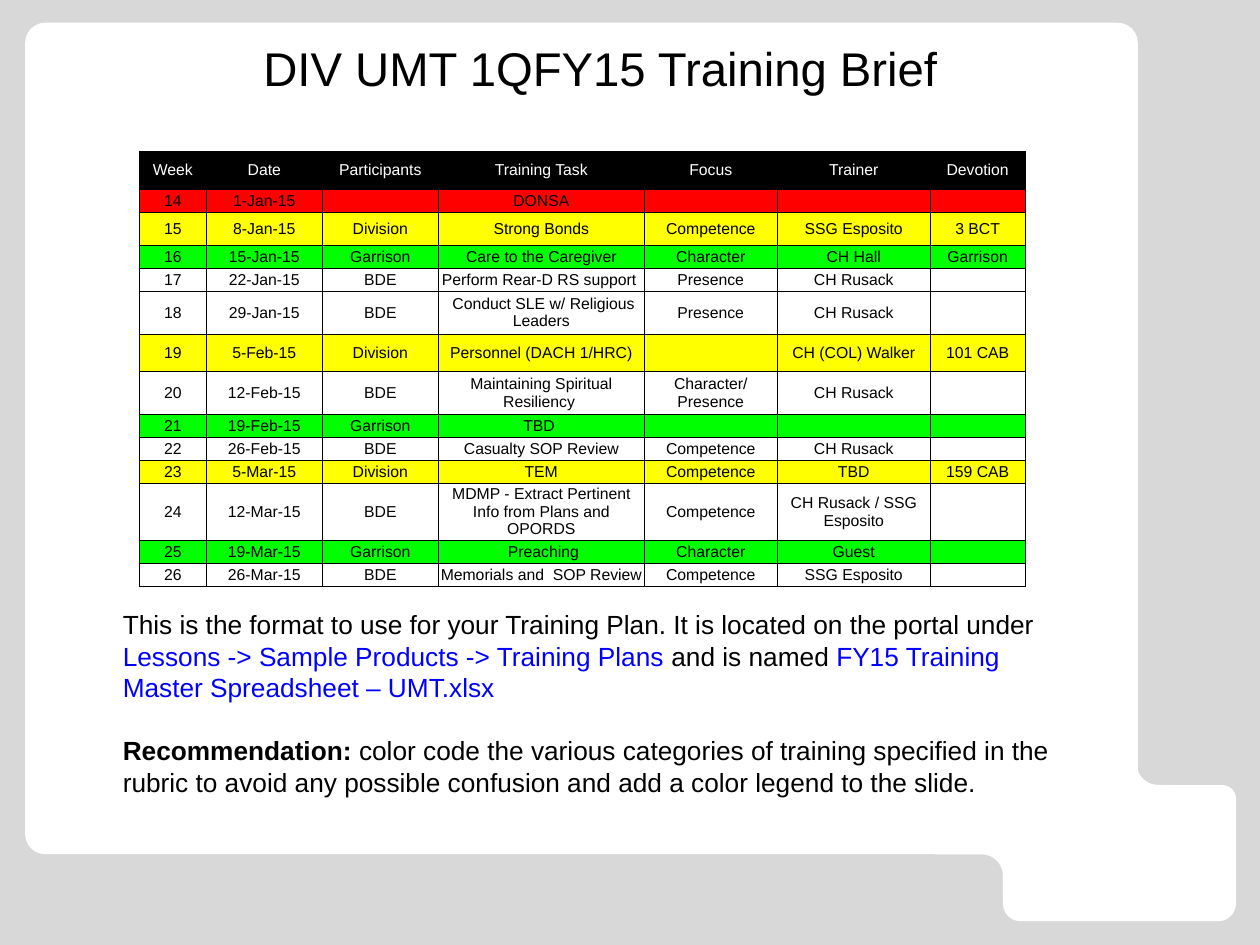
from math import cos, radians, sin

from lxml.etree import SubElement
from pptx import Presentation
from pptx.dml.color import RGBColor
from pptx.enum.shapes import MSO_SHAPE
from pptx.enum.text import MSO_ANCHOR, PP_ALIGN
from pptx.oxml.ns import qn
from pptx.util import Pt

FONT = "Arial"
BLACK, WHITE, BLUE = "000000", "FFFFFF", "0000FF"
RED, YELLOW, GREEN = "FF0000", "FFFF00", "00FF00"

COLUMN_WIDTHS = [38.3, 66.3, 66.3, 117.7, 76, 87.4, 54.3]
HEADINGS = ["Week", "Date", "Participants", "Training Task", "Focus", "Trainer", "Devotion"]
FIRST_WEEK = 14
# Row height, date, participants, task, focus, trainer, devotion
WEEKS = [
    (13.1, "1-Jan-15", "", "DONSA", "", "", ""),
    (18.9, "8-Jan-15", "Division", "Strong Bonds", "Competence", "SSG Esposito", "3 BCT"),
    (13.1, "15-Jan-15", "Garrison", "Care to the Caregiver", "Character", "CH Hall", "Garrison"),
    (13.1, "22-Jan-15", "BDE", "Perform Rear-D RS support ", "Presence", "CH Rusack", ""),
    (24.6, "29-Jan-15", "BDE", " Conduct SLE w/ Religious Leaders", "Presence", "CH Rusack", ""),
    (21.4, "5-Feb-15", "Division", "Personnel (DACH 1/HRC)", "", "CH (COL) Walker", "101 CAB"),
    (24.6, "12-Feb-15", "BDE", "Maintaining Spiritual Resiliency ", "Character/ Presence",
     "CH Rusack", ""),
    (13.1, "19-Feb-15", "Garrison", "TBD ", "", "", ""),
    (13.1, "26-Feb-15", "BDE", "Casualty SOP Review", "Competence", "CH Rusack", ""),
    (13.1, "5-Mar-15", "Division", "TEM", "Competence", "TBD", "159 CAB"),
    (32.6, "12-Mar-15", "BDE", "MDMP - Extract Pertinent Info from Plans and OPORDS",
     "Competence", "CH Rusack / SSG Esposito", ""),
    (13.1, "19-Mar-15", "Garrison", " Preaching", "Character", "Guest", ""),
    (13.1, "26-Mar-15", "BDE", "Memorials and  SOP Review", "Competence", "SSG Esposito", ""),
]
PARTICIPANT_FILLS = {"": RED, "Division": YELLOW, "Garrison": GREEN, "BDE": WHITE}

ADVICE = [
    [("This is the format to use for your Training Plan. It is located on the portal under ",
      BLACK, False),
     ("Lessons -> Sample Products -> Training Plans ", BLUE, False),
     ("and is named ", BLACK, False),
     ("FY15 Training Master Spreadsheet – UMT.xlsx", BLUE, False)],
    [("Recommendation: ", BLACK, True),
     ("color code the various categories of training specified in the rubric to avoid any "
      "possible confusion and add a color legend to the slide.", BLACK, False)],
]


def rgb(value):
    return RGBColor.from_string(value)


def paint_white(shape):
    shape.shadow.inherit = False
    shape.fill.solid()
    shape.fill.fore_color.rgb = rgb(WHITE)
    shape.line.fill.background()


def add_panel(slide, kind, left, top, width, height, roundings=()):
    panel = slide.shapes.add_shape(kind, Pt(left), Pt(top), Pt(width), Pt(height))
    for index, rounding in enumerate(roundings):
        panel.adjustments[index] = rounding
    paint_white(panel)


def add_fillet(slide, center, start, end, corners):
    """Fill an inner corner between panels: an arc in degrees, closed through corners."""
    radius, steps = 12.2, 12
    angles = [radians(start + (end - start) * step / steps) for step in range(steps + 1)]
    arc = [(center[0] + radius * cos(a), center[1] + radius * sin(a)) for a in angles]
    outline = [(Pt(x), Pt(y)) for x, y in arc + corners]
    builder = slide.shapes.build_freeform(*outline[0])
    builder.add_line_segments(outline[1:], close=True)
    paint_white(builder.convert_to_shape())


def add_backdrop(slide):
    slide.background.fill.solid()
    slide.background.fill.fore_color.rgb = rgb("D8D8D8")
    add_fillet(slide, (560.9, 500.4), -90, 0,
               [(573.1, 510.5), (591.1, 510.5), (591.1, 475.2), (534.2, 475.2), (534.2, 488.2)])
    add_fillet(slide, (661.7, 436.3), 180, 90,
               [(671.8, 448.6), (671.8, 466.6), (636.5, 466.6), (636.5, 409.7), (649.4, 409.7)])
    rounded = MSO_SHAPE.ROUND_2_SAME_RECTANGLE
    add_panel(slide, rounded, 573.1, 448.6, 133.2, 77.8, (0.1, 0.13))
    for top in (361.4, 13):
        add_panel(slide, rounded, 14.4, top, 635.8, 126.7, (0.09, 0.09))
    add_panel(slide, MSO_SHAPE.RECTANGLE, 14.4, 85, 635.8, 293)


def add_text_box(slide, left, top, width, height):
    frame = slide.shapes.add_textbox(Pt(left), Pt(top), Pt(width), Pt(height)).text_frame
    frame.word_wrap = True
    return frame


def style(paragraph, size, color=None):
    paragraph.font.name = FONT
    paragraph.font.size = Pt(size)
    if color:
        paragraph.font.color.rgb = rgb(color)


def add_title(slide, title):
    heading = add_text_box(slide, 100.1, 18.7, 486, 67.7).paragraphs[0]
    heading.text = title
    heading.alignment = PP_ALIGN.CENTER
    style(heading, 27, BLACK)


def add_borders(cell):
    properties = cell._tc.get_or_add_tcPr()
    for index, side in enumerate(("a:lnL", "a:lnR", "a:lnT", "a:lnB")):
        border = properties.makeelement(qn(side), {"w": str(Pt(0.5))})
        fill = SubElement(border, qn("a:solidFill"))
        SubElement(fill, qn("a:srgbClr"), val=BLACK)
        properties.insert(index, border)


def fill_cell(cell, text, fill, color):
    cell.margin_left = cell.margin_right = cell.margin_top = cell.margin_bottom = 0
    cell.vertical_anchor = MSO_ANCHOR.MIDDLE
    cell.fill.solid()
    cell.fill.fore_color.rgb = rgb(fill)
    add_borders(cell)
    paragraph = cell.text_frame.paragraphs[0]
    paragraph.alignment = PP_ALIGN.CENTER
    style(paragraph, 9, color)
    if text:
        paragraph.text = text
    else:  # keeps an empty cell from stretching its row
        SubElement(paragraph._p, qn("a:endParaRPr"), sz="900")


def add_schedule(slide):
    rows = [(21.8, HEADINGS, BLACK, WHITE)]
    for week, (height, *entries) in enumerate(WEEKS, FIRST_WEEK):
        rows.append((height, [str(week), *entries], PARTICIPANT_FILLS[entries[1]], BLACK))
    schedule = slide.shapes.add_table(
        len(rows), len(HEADINGS), Pt(79.6), Pt(86.4),
        Pt(sum(COLUMN_WIDTHS)), Pt(sum(row[0] for row in rows))).table
    schedule.first_row = schedule.horz_banding = False
    for column, width in zip(schedule.columns, COLUMN_WIDTHS):
        column.width = Pt(width)
    for row, (height, texts, fill, color) in zip(schedule.rows, rows):
        row.height = Pt(height)
        for cell, text in zip(row.cells, texts):
            fill_cell(cell, text, fill, color)


def add_advice(slide):
    frame = add_text_box(slide, 63.1, 344.2, 559.4, 116.6)
    for index, parts in enumerate(ADVICE):
        paragraph = frame.add_paragraph() if index else frame.paragraphs[0]
        if index:
            paragraph.space_before = Pt(18)
        style(paragraph, 15)
        for text, color, bold in parts:
            run = paragraph.add_run()
            run.text = text
            run.font.color.rgb = rgb(color)
            run.font.bold = bold


def main():
    presentation = Presentation()
    presentation.slide_width, presentation.slide_height = Pt(720), Pt(540)
    slide = presentation.slides.add_slide(presentation.slide_layouts[6])
    add_backdrop(slide)
    add_title(slide, "DIV UMT 1QFY15 Training Brief")
    add_schedule(slide)
    add_advice(slide)
    presentation.save("out.pptx")


if __name__ == "__main__":
    main()
